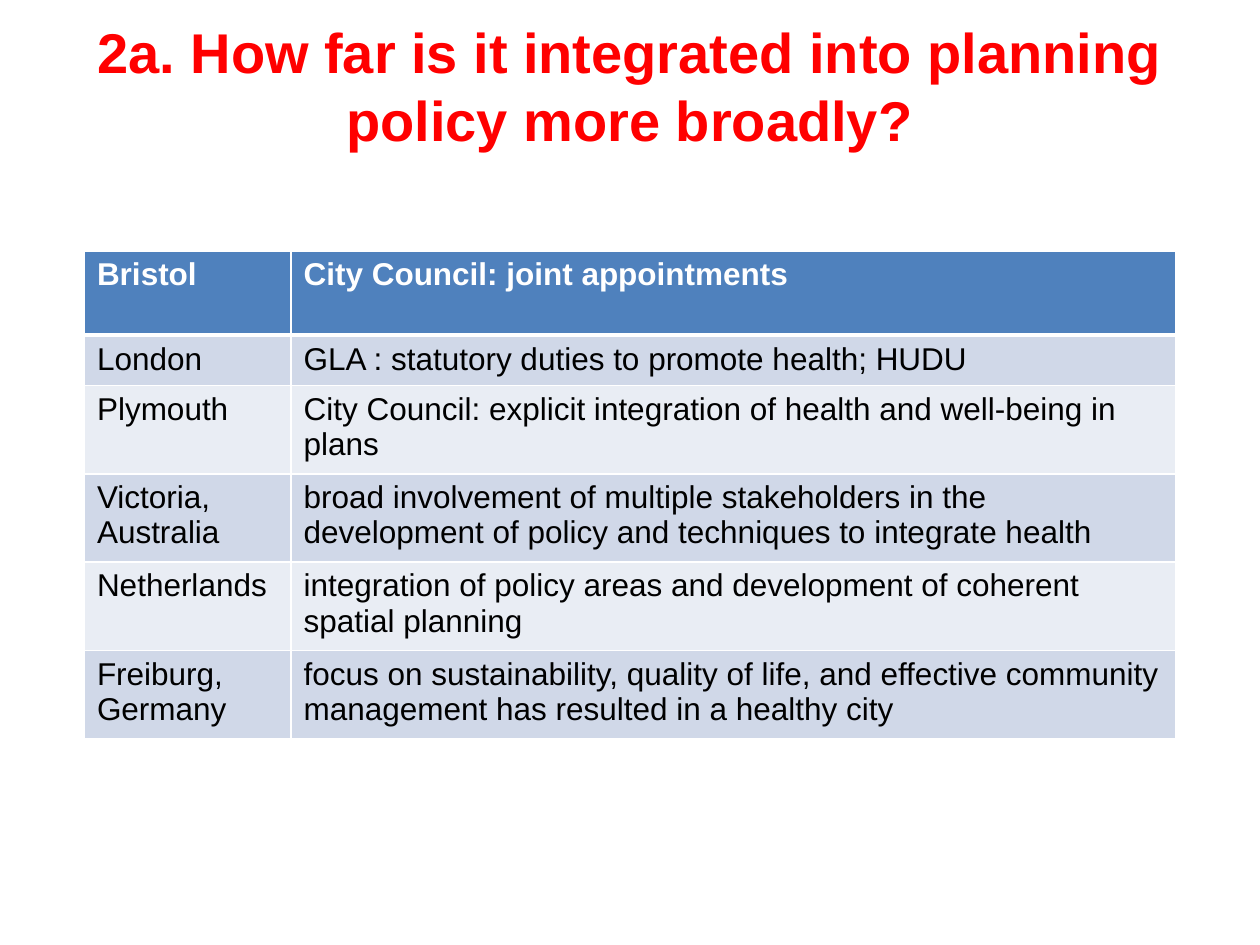
from lxml.etree import SubElement
from pptx import Presentation
from pptx.dml.color import RGBColor
from pptx.enum.text import MSO_ANCHOR, PP_ALIGN
from pptx.oxml.ns import qn
from pptx.util import Inches, Pt

TITLE = "2a. How far is it integrated into planning policy more broadly?"
ROWS = [
    ("Bristol", "City Council: joint appointments"),
    ("London", "GLA : statutory duties to promote health; HUDU"),
    ("Plymouth", "City Council: explicit integration of health and well-being in plans"),
    ("Victoria, Australia", "broad involvement of multiple stakeholders in the "
     "development of policy and techniques to integrate health"),
    ("Netherlands", "integration of policy areas and development of coherent spatial planning"),
    ("Freiburg, Germany", "focus on sustainability, quality of life, and effective community "
     "management has resulted in a healthy city"),
]
WIDTHS = [1.64, 7.02]
HEIGHTS = [0.67, 0.38, 0.66, 0.66, 0.66, 0.69]
COLORS = {"title": "FF0000", "head": "4F81BD", "odd": "D0D8E8",
          "even": "E9EDF4", "line": "FFFFFF", "text": "000000"}


def color(name):
    return RGBColor.from_string(COLORS[name])


def write(frame, text, size, name, bold):
    run = frame.paragraphs[0].add_run()
    run.text = text
    run.font.name = "Arial"
    run.font.size = Pt(size)
    run.font.bold = bold
    run.font.color.rgb = color(name)


def border(cell, head, below):
    props = cell._tc.get_or_add_tcPr()
    thick = {"L": 1, "R": 1, "T": 3 if below else 1, "B": 3 if head else 1}
    for index, (side, width) in enumerate(thick.items()):
        line = SubElement(props, qn(f"a:ln{side}"), w=str(Pt(width)))
        fill = SubElement(line, qn("a:solidFill"))
        SubElement(fill, qn("a:srgbClr"), val=COLORS["line"])
        props.remove(line)
        props.insert(index, line)


def main():
    deck = Presentation()
    deck.slide_width, deck.slide_height = Inches(10), Inches(7.5)
    slide = deck.slides.add_slide(deck.slide_layouts[6])

    title = slide.shapes.add_textbox(Inches(0.5), Inches(0.05), Inches(9), Inches(1.25))
    frame = title.text_frame
    frame.word_wrap = True
    frame.vertical_anchor = MSO_ANCHOR.MIDDLE
    frame.paragraphs[0].alignment = PP_ALIGN.CENTER
    write(frame, TITLE, 32, "title", True)

    table = slide.shapes.add_table(len(ROWS), len(WIDTHS), Inches(0.67), Inches(1.99),
                                   Inches(sum(WIDTHS)), Inches(sum(HEIGHTS))).table
    for column, width in zip(table.columns, WIDTHS):
        column.width = Inches(width)
    for row, height in zip(table.rows, HEIGHTS):
        row.height = Inches(height)
    for r, texts in enumerate(ROWS):
        head = r == 0
        band = "head" if head else "odd" if r % 2 else "even"
        for c, text in enumerate(texts):
            cell = table.cell(r, c)
            cell.fill.solid()
            cell.fill.fore_color.rgb = color(band)
            border(cell, head, r == 1)
            write(cell.text_frame, text, 18, "line" if head else "text", head)

    deck.save("out.pptx")


if __name__ == "__main__":
    main()
